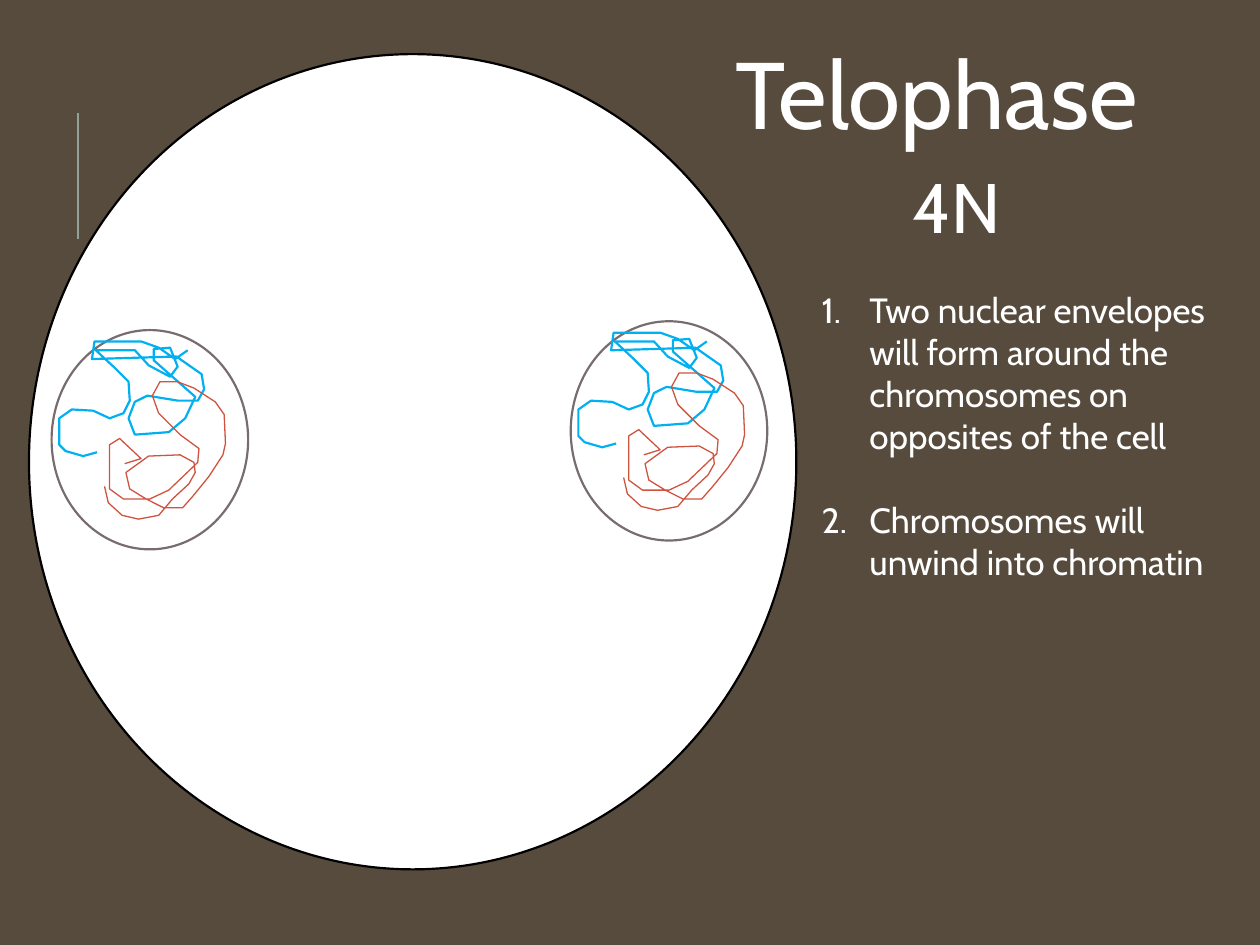
from dataclasses import dataclass

import lxml.etree
import pptx
import pptx.dml.color
import pptx.enum.shapes
import pptx.enum.text
import pptx.oxml.ns
import pptx.util
from pptx.util import Inches


@dataclass(frozen=True)
class Theme:
    font: str = "Cabin"
    background: str = "564B3C"
    text: str = "FFFFFF"
    cell_fill: str = "FFFFFF"
    membrane: str = "000000"
    envelope: str = "786C71"
    rule: str = "93A299"
    blue: str = "00B0F0"
    red: str = "CF543F"
    title_size: float = 54
    ploidy_size: float = 40
    body_size: float = 20


@dataclass(frozen=True)
class Box:
    left: float
    top: float
    width: float
    height: float

    def lengths(self) -> tuple:
        return tuple(map(Inches, (self.left, self.top, self.width, self.height)))


@dataclass(frozen=True)
class Strand:
    color: str
    weight: float
    points: tuple  # hundredths of an inch, placed for the left nucleus


THEME = Theme()
CELL = Box(0.23, 0.43, 6.09, 6.47)
LEFT_NUCLEUS = Box(0.41, 2.62, 1.56, 1.74)
RIGHT_NUCLEUS = Box(4.53, 2.55, 1.56, 1.74)

STRANDS = (
    Strand(THEME.blue, 1.25, (
        (77, 359), (66, 362), (52, 358), (47, 353), (47, 332), (57, 325), (74, 326),
        (87, 332), (98, 328), (103, 318), (102, 303), (90, 291), (76, 278), (107, 278),
        (118, 290), (135, 299), (141, 291), (135, 276), (122, 277), (122, 286),
        (155, 315), (147, 332), (134, 343), (107, 345), (102, 332), (107, 319),
        (117, 314), (141, 318), (157, 318), (162, 309), (160, 297), (140, 283),
        (73, 285), (75, 271), (112, 271), (126, 276), (139, 285), (149, 278))),
    Strand(THEME.red, 0.75, (
        (83, 386), (86, 399), (97, 409), (110, 412), (126, 409), (137, 396),
        (150, 384), (155, 375), (154, 367), (143, 361), (118, 362), (100, 375),
        (103, 388), (116, 396), (130, 403), (145, 403), (153, 394), (166, 378),
        (177, 361), (179, 352), (178, 329), (171, 319), (154, 308), (141, 303),
        (127, 303), (121, 314), (126, 328), (143, 345), (158, 356), (157, 367),
        (134, 389), (119, 396), (98, 396), (87, 388), (87, 353), (95, 348),
        (112, 364), (99, 368))),
)


def rgb(color: str) -> pptx.dml.color.RGBColor:
    return pptx.dml.color.RGBColor.from_string(color)


def style_line(shape, color: str, weight: float) -> None:
    shape.line.color.rgb = rgb(color)
    shape.line.width = pptx.util.Pt(weight)


def draw_ellipse(slide, box: Box, outline: str) -> None:
    ellipse = slide.shapes.add_shape(pptx.enum.shapes.MSO_SHAPE.OVAL, *box.lengths())
    ellipse.shadow.inherit = False
    ellipse.fill.solid()
    ellipse.fill.fore_color.rgb = rgb(THEME.cell_fill)
    style_line(ellipse, outline, 1.25)


def draw_strand(slide, strand: Strand, shift_x: float, shift_y: float) -> None:
    builder = slide.shapes.build_freeform(*strand.points[0], scale=Inches(0.01))
    builder.add_line_segments(strand.points[1:], close=False)
    chromatin = builder.convert_to_shape(Inches(shift_x), Inches(shift_y))
    chromatin.shadow.inherit = False
    chromatin.fill.background()
    style_line(chromatin, strand.color, strand.weight)


def draw_nucleus(slide, box: Box) -> None:
    draw_ellipse(slide, box, THEME.envelope)
    for strand in STRANDS:
        draw_strand(slide, strand, box.left - LEFT_NUCLEUS.left, box.top - LEFT_NUCLEUS.top)


def draw_rule(slide) -> None:
    rule = slide.shapes.add_connector(
        pptx.enum.shapes.MSO_CONNECTOR.STRAIGHT,
        Inches(0.62), Inches(1.9), Inches(0.62), Inches(0.9))
    style_line(rule, THEME.rule, 1.5)
    lxml.etree.SubElement(rule._element.spPr, pptx.oxml.ns.qn("a:effectLst"))


def number_paragraph(paragraph) -> None:
    properties = paragraph._p.get_or_add_pPr()
    properties.set("marL", str(Inches(0.38)))
    properties.set("indent", str(-Inches(0.38)))
    numbering = lxml.etree.SubElement(properties, pptx.oxml.ns.qn("a:buAutoNum"))
    numbering.set("type", "arabicPeriod")


def write_text(holder, box: Box, lines: tuple, size: float, numbered: bool = False) -> None:
    holder.left, holder.top, holder.width, holder.height = box.lengths()
    frame = holder.text_frame
    frame.word_wrap = True
    frame.auto_size = pptx.enum.text.MSO_AUTO_SIZE.NONE
    frame.vertical_anchor = pptx.enum.text.MSO_ANCHOR.TOP
    frame.text = "\n".join(lines)
    for index, paragraph in enumerate(frame.paragraphs):
        paragraph.alignment = pptx.enum.text.PP_ALIGN.LEFT
        paragraph.space_before = pptx.util.Pt(24 if index else 0)
        if numbered:
            number_paragraph(paragraph)
        paragraph.font.name = THEME.font
        paragraph.font.size = pptx.util.Pt(size)
        paragraph.font.color.rgb = rgb(THEME.text)


def main() -> None:
    deck = pptx.Presentation()
    deck.slide_width, deck.slide_height = Inches(10), Inches(7.5)
    slide = deck.slides.add_slide(deck.slide_layouts[1])
    slide.background.fill.solid()
    slide.background.fill.fore_color.rgb = rgb(THEME.background)

    # Dividing cell with its two new nuclei
    draw_rule(slide)
    draw_ellipse(slide, CELL, THEME.membrane)
    for nucleus in (RIGHT_NUCLEUS, LEFT_NUCLEUS):
        draw_nucleus(slide, nucleus)

    # Phase name, chromosome count and steps
    write_text(slide.shapes.title, Box(5.74, 0.23, 3.64, 1.01), ("Telophase",), THEME.title_size)
    ploidy_box = Box(7.14, 1.25, 2.9, 0.77)
    ploidy = slide.shapes.add_textbox(*ploidy_box.lengths())
    write_text(ploidy, ploidy_box, ("4N",), THEME.ploidy_size)
    steps = (
        "Two nuclear envelopes will form around the chromosomes on opposites of the cell",
        "Chromosomes will unwind into chromatin",
    )
    write_text(slide.placeholders[1], Box(6.42, 2.24, 3.29, 2.46), steps,
               THEME.body_size, numbered=True)

    deck.save("out.pptx")


if __name__ == "__main__":
    main()
